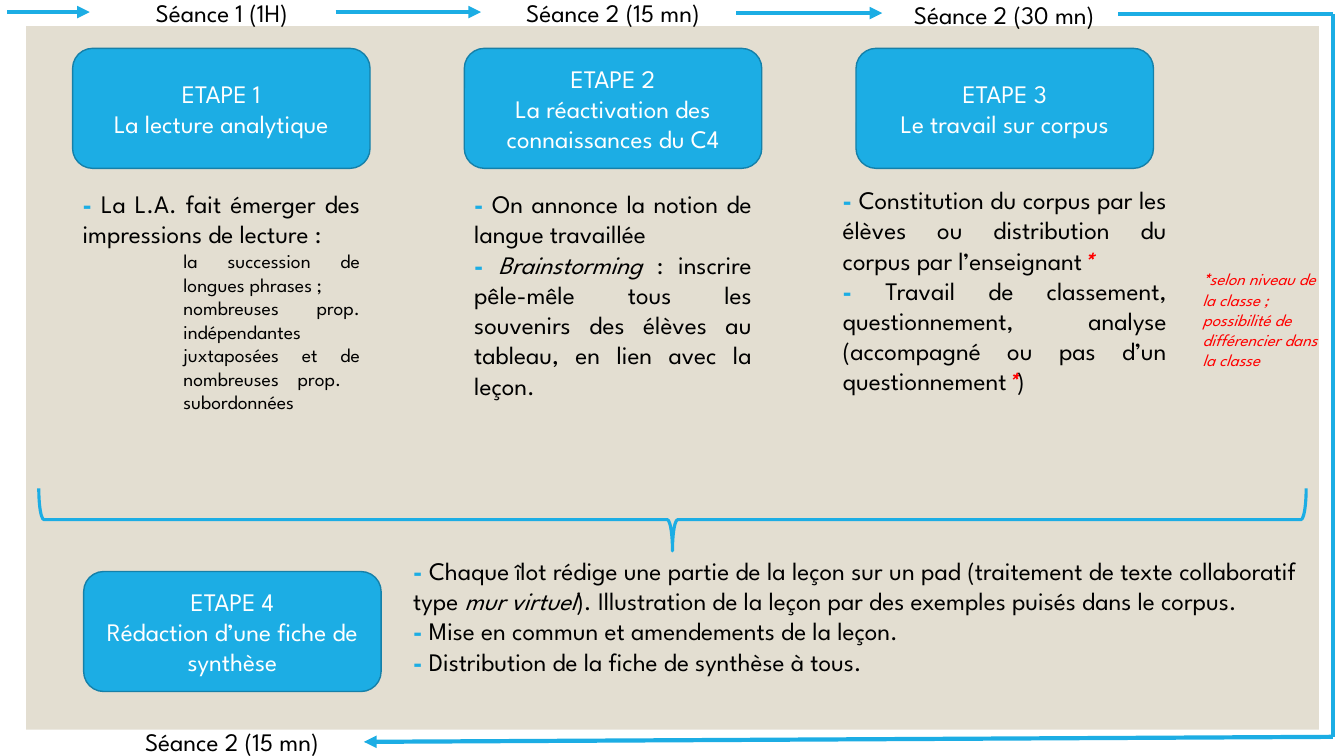
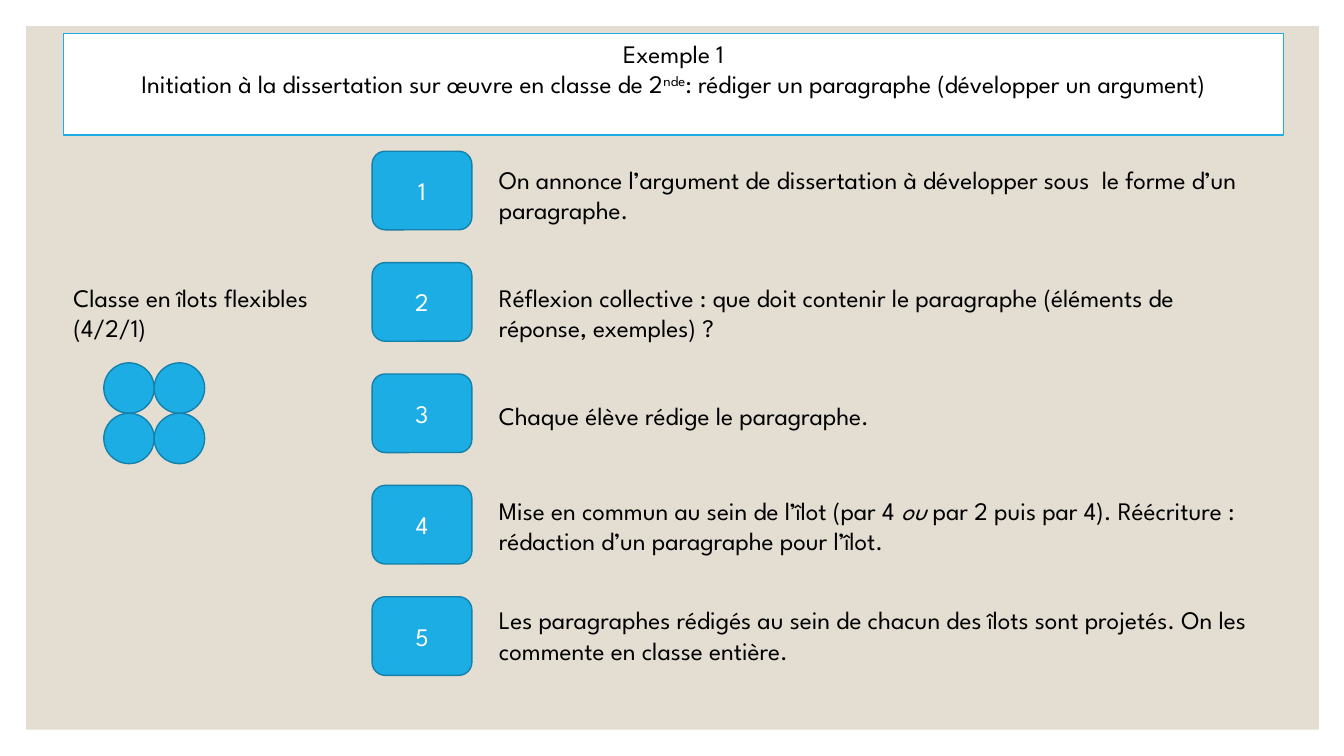
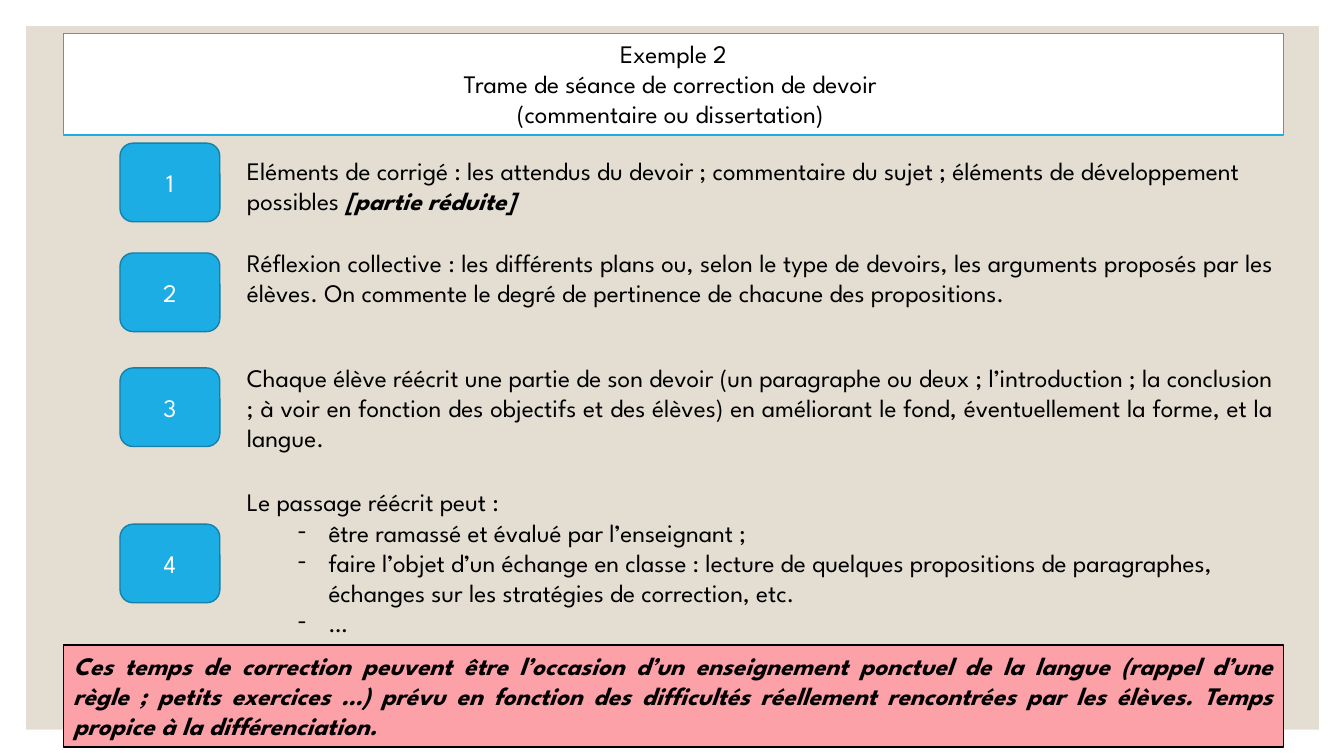
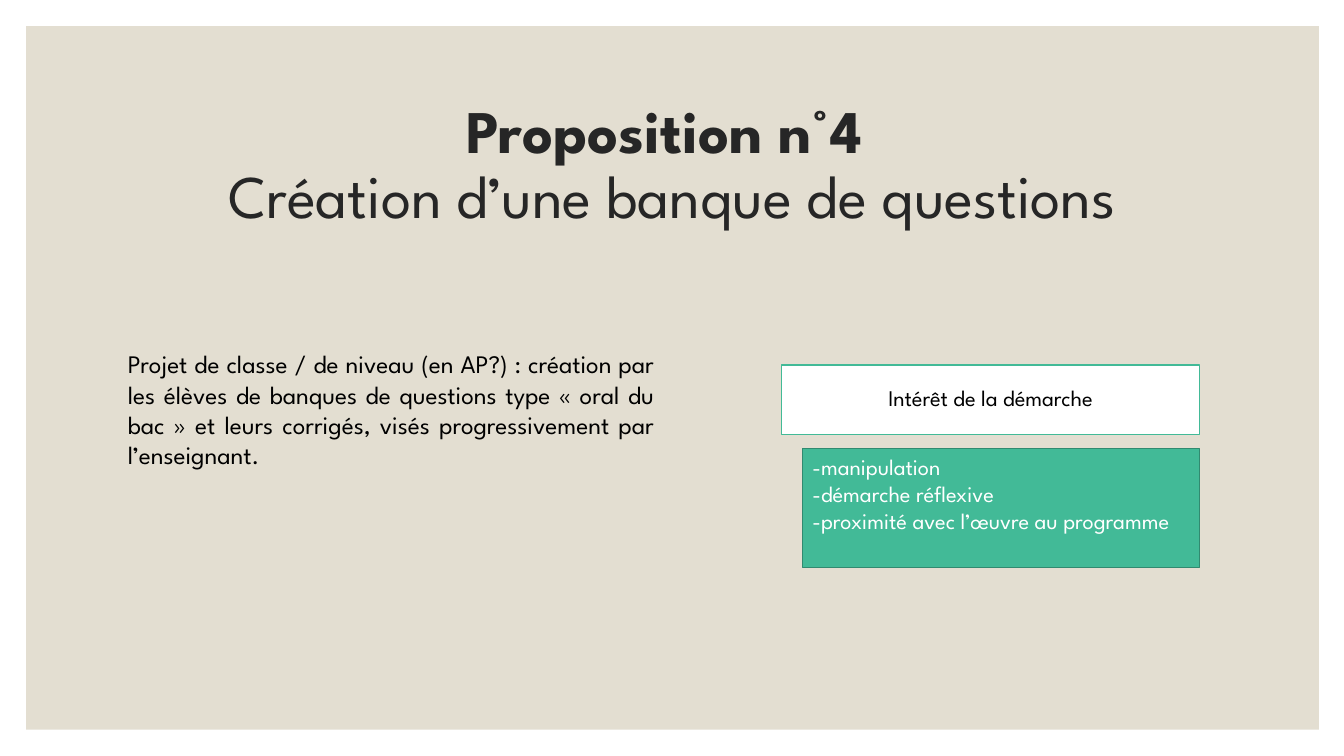
from lxml import etree
from pptx import Presentation, util as u
from pptx.dml.color import RGBColor
from pptx.enum import shapes, text
from pptx.oxml.ns import qn

hue = RGBColor.from_string
FONT = "League Spartan"
BLUE, EDGE, SAND = "1CADE4", "1580A9", "E3DED1"
GREEN, MOSS, PINK = "42BA97", "318A70", "FDA1A8"
WHITE, BLACK, RED, GREY = "FFFFFF", "000000", "FF0000", "262626"
WIDE, HIGH = 13.33, 7.5
RECT, ROUND, RING, BRACE = (
    shapes.MSO_SHAPE.RECTANGLE, shapes.MSO_SHAPE.ROUNDED_RECTANGLE,
    shapes.MSO_SHAPE.FLOWCHART_CONNECTOR, shapes.MSO_SHAPE.LEFT_BRACE)
MID, TOP = text.MSO_ANCHOR.MIDDLE, text.MSO_ANCHOR.TOP
LEFT, FULL, CENTRE = text.PP_ALIGN.LEFT, text.PP_ALIGN.JUSTIFY, text.PP_ALIGN.CENTER
DASH = ("-", "b", BLUE)
STAR = ("*", "bi", RED)


def put(page, box, paras=(), form=None, fill=None, line=None, size=18,
        ink=BLACK, align=LEFT, anchor=TOP):
    """Add a shape, or a text box if form is None.

    A paragraph is a list of runs; a run is a string or a tuple of
    string, flags (b bold, i italic, s superscript) and optional colour.
    """
    box = [u.Inches(n) for n in box]
    if form is None:
        item = page.shapes.add_textbox(*box)
    else:
        item = page.shapes.add_shape(form, *box)
        item.shadow.inherit = False
        if fill:
            item.fill.solid()
            item.fill.fore_color.rgb = hue(fill)
        else:
            item.fill.background()
        if line:
            item.line.color.rgb = hue(line)
            item.line.width = u.Pt(1)
        else:
            item.line.fill.background()
    frame = item.text_frame
    frame.word_wrap = True
    frame.vertical_anchor = anchor
    for n, runs in enumerate(paras):
        para = frame.paragraphs[0] if n == 0 else frame.add_paragraph()
        para.alignment = align
        for part in runs:
            words, flags, *tint = (part, "") if isinstance(part, str) else part
            run = para.add_run()
            run.text = words
            font = run.font
            font.name, font.size = FONT, u.Pt(size)
            font.bold, font.italic = "b" in flags, "i" in flags
            font.color.rgb = hue(tint[0] if tint else ink)
            if "s" in flags:
                run._r.get_or_add_rPr().set("baseline", "30000")
    return item


def link(page, start, end, arrow=True, goal=None, side=1):
    """Draw a line, joined to one side of the goal shape if there is one."""
    wire = page.shapes.add_connector(
        shapes.MSO_CONNECTOR.STRAIGHT, *[u.Inches(n) for n in start + end])
    if goal is not None:
        wire.end_connect(goal, side)
    wire.line.color.rgb = hue(BLUE)
    wire.line.width = u.Pt(3)
    if arrow:
        etree.SubElement(wire.line._get_or_add_ln(), qn("a:tailEnd"), type="triangle")
    etree.SubElement(wire.element.spPr, qn("a:effectLst"))


deck = Presentation()
deck.slide_width, deck.slide_height = u.Inches(WIDE), u.Inches(HIGH)
blank = deck.slide_layouts[6]
plan, essay, review, bank = [deck.slides.add_slide(blank) for _ in range(4)]

# The sand panel belongs to the layout, so every slide shows it.
panel = put(plan, (0.26, 0.26, 12.82, 6.98), form=RECT, fill=SAND)
blank.shapes.element.append(panel.element)

# Slide 1: four stages
col = 3.885
stages = [
    (0.72, 0.48, "La lecture analytique"),
    (0.72 + col, 0.48, "La réactivation des connaissances du C4"),
    (0.72 + 2 * col, 0.48, "Le travail sur corpus"),
    (0.83, 5.67, "Rédaction d’une fiche de synthèse"),
]
for n, (x, y, name) in enumerate(stages, 1):
    put(plan, (x, y, 2.95, 1.19), [[f"ETAPE {n}"], [name]], ROUND, BLUE, EDGE,
        ink=WHITE, align=CENTRE, anchor=MID)

brace = put(plan, (6.36, -1.13, 0.62, 12.57), form=BRACE, line=BLUE)
brace.rotation = 270
brace.line.width = u.Pt(2.25)

pad = put(plan, (4, 5.46, 8.96, 1.62), [
    [DASH, " Chaque îlot rédige une partie de la leçon sur un pad (traitement de "
     "texte collaboratif type ", ("mur virtuel", "i"),
     "). Illustration de la leçon par des exemples puisés dans le corpus."],
    [DASH, " Mise en commun et amendements de la leçon."],
    [DASH, " Distribution de la fiche de synthèse à tous."]])
pad.text_frame.paragraphs[0].alignment = FULL

notes = put(plan, (0.72, 1.82, 2.95, 2.66), [
    [DASH, " La L.A. fait émerger des impressions de lecture :"],
    ["la succession de longues phrases ;"],
    ["nombreuses prop. indépendantes juxtaposées et de nombreuses prop.  "
     "subordonnées"]], align=FULL)
for para in notes.text_frame.paragraphs[1:]:
    para.level = 2
    para._p.get_or_add_pPr().set("marL", str(u.Inches(1)))
    para._p.get_or_add_pPr().set("indent", "0")
    para.runs[0].font.size = u.Pt(14)

put(plan, (0.72 + col, 1.82, 2.95, 3.06), [
    [DASH, " On annonce la notion de langue travaillée"],
    [DASH, " ", ("Brainstorming", "i"), " : inscrire pêle-mêle tous les souvenirs "
     "des élèves au tableau, en lien avec la leçon."]], align=FULL)
put(plan, (8.26, 1.78, 3.41, 3.06), [
    [DASH, " Constitution du corpus par les élèves ou distribution du corpus par "
     "l’enseignant", STAR],
    [DASH, " Travail de classement, questionnement, analyse (accompagné ou pas d’un "
     "questionnement", STAR, ")"]], align=FULL)
put(plan, (11.83, 2.62, 1.4, 1.11), [
    [STAR, ("selon niveau de la classe ; possibilité de différencier dans la classe",
            "i")]], size=12, ink=RED)

times = [(0.89, -0.08, "1 (1H)"), (4.77, -0.08, "2 (15 mn)"),
         (8.65, -0.06, "2 (30 mn)"), (0.99, 7.16, "2 (15 mn)")]
first, second, third, last = [
    put(plan, (x, y, 2.62, 0.4), [[f"Séance {name}"]], align=CENTRE)
    for x, y, name in times]
link(plan, (0.07, 0.12), (0.89, 0.12), goal=first)
link(plan, (3.33, 0.12), (4.77, 0.12), goal=second)
link(plan, (7.3, 0.13), (8.75, 0.13))
link(plan, (11.09, 0.14), (13.22, 0.14), arrow=False)
link(plan, (13.22, 0.14), (13.22, 7.31), arrow=False)
link(plan, (13.22, 7.31), (3.61, 7.36), goal=last, side=3)

# Slides 2 and 3: a heading, then numbered steps
heads = [
    (essay, [["Exemple 1"],
             ["Initiation à la dissertation sur œuvre en classe de 2", ("nde", "s"),
              ": rédiger un paragraphe (développer un argument)"]]),
    (review, [["Exemple 2"], ["Trame de séance de correction de devoir "],
              ["(commentaire ou dissertation) "]]),
]
for page, paras in heads:
    put(page, (0.63, 0.33, 12.1, 1.01), paras, RECT, WHITE, BLUE, align=CENTRE)

put(essay, (0.63, 2.75, 2.53, 0.71), [["Classe en îlots flexibles (4/2/1)"]])
for n in range(4):
    put(essay, (1.03 + n % 2 * 0.5, 3.6 + n // 2 * 0.5, 0.5, 0.5),
        form=RING, fill=BLUE, line=EDGE)

# Each step: top of its number, top of its text, alignment, paragraphs
row = 1.105
tasks = [
    (1.5, 1.58, LEFT, [["On annonce l’argument de dissertation à développer sous  le "
                        "forme d’un paragraphe."]]),
    (1.5 + row, 2.75, LEFT, [["Réflexion collective : que doit contenir le paragraphe "
                              "(éléments de réponse, exemples) ?"]]),
    (1.5 + 2 * row, 3.92, LEFT, [["Chaque élève rédige le paragraphe."]]),
    (1.5 + 3 * row, 4.86, LEFT, [["Mise en commun au sein de l’îlot (par 4 ", ("ou", "i"),
                                  " par 2 puis par 4). Réécriture : rédaction d’un "
                                  "paragraphe pour l’îlot."]]),
    (1.5 + 4 * row, 5.95, LEFT, [["Les paragraphes rédigés au sein de chacun des îlots "
                                  "sont projetés. On les commente en classe entière."]]),
]
fixes = [
    (1.42, 1.49, LEFT, [["Eléments de corrigé : les attendus du devoir ; commentaire du "
                         "sujet ; éléments de développement possibles ",
                         ("[partie réduite]", "bi")]]),
    (2.51, 2.4, FULL, [["Réflexion collective : les différents plans ou, selon le type de "
                        "devoirs, les arguments proposés par les élèves. On commente le "
                        "degré de pertinence de chacune des propositions."]]),
    (3.65, 3.54, FULL, [["Chaque élève réécrit une partie de son devoir (un paragraphe ou "
                         "deux ; l’introduction ; la conclusion ; à voir en fonction des "
                         "objectifs et des élèves) en améliorant le fond, éventuellement "
                         "la forme, et la langue."]]),
    (5.2, 4.78, LEFT, [["Le passage réécrit peut :"],
                       ["être ramassé et évalué par l’enseignant ;"],
                       ["faire l’objet d’un échange en classe : lecture de quelques "
                        "propositions de paragraphes, échanges sur les stratégies de "
                        "correction, etc."],
                       ["…"]]),
]
for page, x, wide, steps in [(essay, 3.69, 7.64, tasks), (review, 1.19, 10.38, fixes)]:
    for n, (y, top, align, paras) in enumerate(steps, 1):
        put(page, (x, y, 0.99, 0.78), [[str(n)]], ROUND, BLUE, EDGE,
            ink=WHITE, align=CENTRE, anchor=MID)
        body = put(page, (x + 1.16, top, wide, 0.31 * len(paras) + 0.4), paras,
                   align=align)
        for para in body.text_frame.paragraphs[1:]:
            para.level = 1
            prop = para._p.get_or_add_pPr()
            prop.set("marL", str(u.Inches(0.81)))
            prop.set("indent", str(-u.Inches(0.31)))
            etree.SubElement(prop, qn("a:buFont"), typeface=FONT)
            etree.SubElement(prop, qn("a:buChar"), char="-")

put(review, (0.63, 6.4, 12.1, 1.01), [
    [("Ces temps de correction peuvent être l’occasion d’un enseignement ponctuel de la "
      "langue (rappel d’une règle ; petits exercices …) prévu en fonction des difficultés "
      "réellement rencontrées par les élèves. Temps propice à la différenciation.",
      "bi")]], RECT, PINK, BLACK, align=FULL)

# Slide 4: proposal
title = put(bank, (1.17, 0.7, 11, 1.9), [[("Proposition n°4 ", "b")]], size=43.2,
            ink=GREY, align=CENTRE, anchor=MID)
para = title.text_frame.paragraphs[0]
para.line_spacing = 0.9
para.add_line_break()
run = para.add_run()
run.text = "Création d’une banque de questions"
run.font.name, run.font.size = FONT, u.Pt(43.2)
run.font.color.rgb = hue(GREY)

put(bank, (1.17, 3.41, 5.42, 2.22), [
    ["Projet de classe / de niveau (en AP?) : création par les élèves de banques de "
     "questions type « oral du bac » et leurs corrigés, visés progressivement par "
     "l’enseignant."]], align=FULL)
label = put(bank, (7.75, 3.62, 4.15, 0.69), [["Intérêt de la démarche"]], RECT, WHITE,
            GREEN, size=16, align=CENTRE, anchor=MID)
label.text_frame.paragraphs[0].line_spacing = 0.9
put(bank, (7.96, 4.45, 3.94, 1.18), [
    ["-manipulation"], ["-démarche réflexive"],
    ["-proximité avec l’œuvre au programme"]], RECT, GREEN, MOSS, size=16, ink=WHITE,
    align=FULL)

deck.save("out.pptx")
